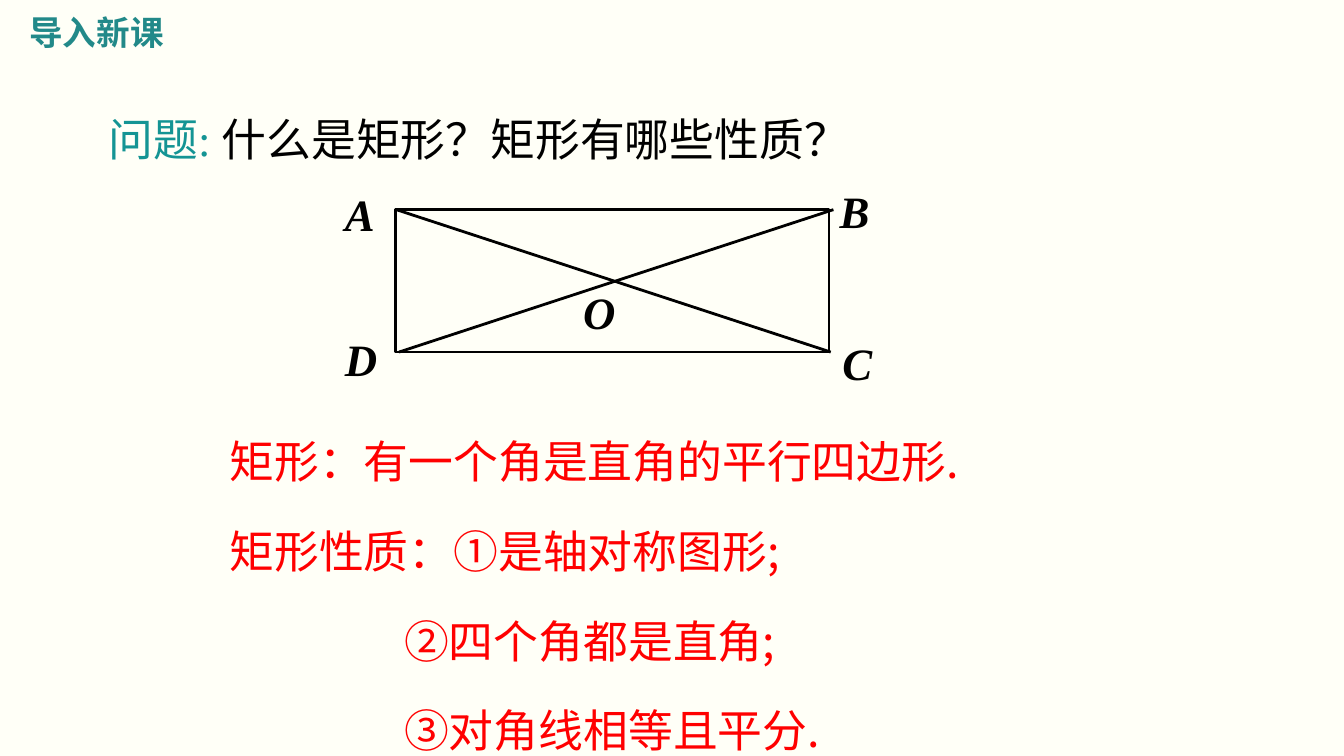
from lxml import etree
from pptx import Presentation
from pptx.dml.color import RGBColor
from pptx.enum import shapes, text
from pptx.oxml import ns
from pptx.util import Cm, Pt

# Content
TITLE = "导入新课"
QUESTION = [("问题: ", "teal"), ("什么是矩形？矩形有哪些性质？", "black")]
ANSWERS = [  # text, left indent in cm
    ("矩形：有一个角是直角的平行四边形.", 0),
    ("矩形性质：①是轴对称图形;", 0),
    ("②四个角都是直角;", 3.3),
    ("③对角线相等且平分.", 3.3),
]
VERTICES = [  # letter, left, top in cm
    ("A", 6.27, 3.4),
    ("B", 15.62, 3.35),
    ("C", 15.67, 6.22),
    ("D", 6.27, 6.15),
    ("O", 10.77, 5.26),
]
RECT = (7.47, 3.96, 8.2, 2.69)
DIAGONALS = [(7.49, 3.96, 15.7, 6.65), (7.54, 6.65, 15.75, 3.96)]

IVORY = RGBColor(0xFF, 0xFF, 0xF7)
TEAL = RGBColor(0x14, 0x94, 0x94)
TITLE_TEAL = RGBColor(0x22, 0x89, 0x89)
BLACK = RGBColor(0, 0, 0)
RED = RGBColor(0xFF, 0, 0)
COLORS = {"teal": TEAL, "black": BLACK}
SERIF, SANS, CJK = "Times New Roman", "Arial", "Noto Sans CJK SC"


def add_span(para, words, font, size, color, bold=False, italic=False):
    span = para.add_run()
    span.text = words
    span.font.name, span.font.size = font, Pt(size)
    span.font.bold, span.font.italic = bold, italic
    span.font.color.rgb = color
    east_asian = etree.SubElement(span.font._element, ns.qn("a:ea"))
    east_asian.set("typeface", CJK)


def add_box(page, left, top, width, height, wrap=True):
    box = page.shapes.add_textbox(Cm(left), Cm(top), Cm(width), Cm(height))
    box.text_frame.word_wrap = wrap
    box.text_frame.auto_size = text.MSO_AUTO_SIZE.SHAPE_TO_FIT_TEXT
    return box.text_frame


def set_line(shape):
    shape.line.color.rgb = BLACK
    shape.line.width = Pt(1.5)


deck = Presentation()
deck.slide_width, deck.slide_height = Cm(25.4), Cm(14.28)
page = deck.slides.add_slide(deck.slide_layouts[5])
page.background.fill.solid()
page.background.fill.fore_color.rgb = IVORY

# Title
title = page.shapes.title
title.left, title.top, title.width, title.height = Cm(0.3), Cm(0.1), Cm(3.1), Cm(1.02)
title.text_frame.word_wrap = False
title.text_frame.vertical_anchor = text.MSO_ANCHOR.TOP
title_para = title.text_frame.paragraphs[0]
title_para.alignment = text.PP_ALIGN.LEFT
add_span(title_para, TITLE, SANS, 18, TITLE_TEAL, bold=True)

# Question
para = add_box(page, 1.8, 1.45, 16.51, 1.8).paragraphs[0]
para.line_spacing = Pt(44)
for words, color in QUESTION:
    add_span(para, words, SERIF, 24, COLORS[color])

# Rectangle with its diagonals
rectangle = page.shapes.add_shape(shapes.MSO_SHAPE.RECTANGLE, *map(Cm, RECT))
rectangle.shadow.inherit = False
rectangle.fill.background()
set_line(rectangle)
for ends in DIAGONALS:
    diagonal = page.shapes.add_connector(shapes.MSO_CONNECTOR.STRAIGHT, *map(Cm, ends))
    set_line(diagonal)
    etree.SubElement(diagonal._element.spPr, ns.qn("a:effectLst"))

# Point letters
for letter, left, top in VERTICES:
    label = add_box(page, left, top, 1.1, 1.27, wrap=False)
    add_span(label.paragraphs[0], letter, SERIF, 24, BLACK, bold=True, italic=True)

# Definition and properties
frame = add_box(page, 4.09, 7.54, 19.2, 7.04)
for number, (words, indent) in enumerate(ANSWERS):
    para = frame.add_paragraph() if number else frame.paragraphs[0]
    para.line_spacing = Pt(44)
    if number:
        para.space_before = Pt(4)
    if indent:
        para._p.get_or_add_pPr().set("marL", str(Cm(indent)))
    add_span(para, words, CJK, 24, RED)

deck.save("out.pptx")
